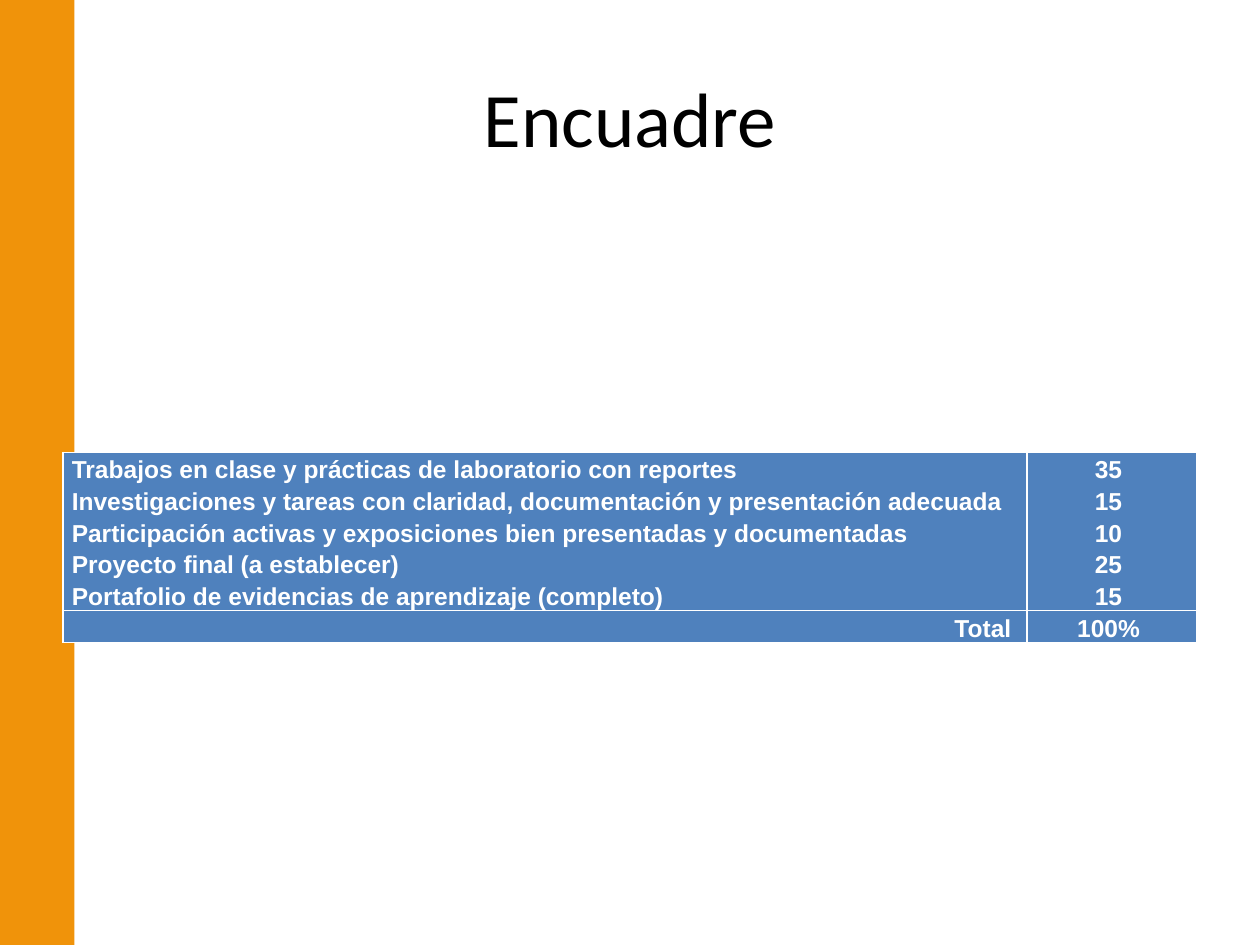
from pptx import Presentation
from pptx.dml.color import RGBColor
from pptx.enum.shapes import MSO_SHAPE as Shape
from pptx.enum.text import MSO_ANCHOR as Anchor, PP_ALIGN as Align
from pptx.util import Inches, Pt

ORANGE = RGBColor(0xF0, 0x93, 0x0A)
BLUE = RGBColor(0x4F, 0x81, 0xBD)
WHITE = RGBColor(0xFF, 0xFF, 0xFF)
BLACK = RGBColor(0, 0, 0)

WIDTH, HEIGHT = Inches(10), Inches(7.5)
MARGIN = Inches(0.5)
INNER = WIDTH - 2 * MARGIN

ITEMS = [
    ("Trabajos en clase y prácticas de laboratorio con reportes", "35 "),
    ("Investigaciones y tareas con claridad, documentación y presentación adecuada", "15 "),
    ("Participación activas y exposiciones bien presentadas y documentadas", "10 "),
    ("Proyecto final (a establecer)", "25 "),
    ("Portafolio de evidencias de aprendizaje (completo)", "15 "),
]
TOTAL = ("Total ", "100% ")


def add_band(slide, left, top, width, height):
    band = slide.shapes.add_shape(Shape.RECTANGLE, left, top, width, height)
    band.shadow.inherit = False
    band.fill.solid()
    band.fill.fore_color.rgb = ORANGE
    band.line.fill.background()


def set_title(slide, text, left, top, width, height):
    title = slide.shapes.title
    title.left, title.top, title.width, title.height = left, top, width, height
    frame = title.text_frame
    frame.text = text
    frame.vertical_anchor = Anchor.MIDDLE
    frame.margin_left = frame.margin_right = Inches(0.1)
    frame.margin_top = frame.margin_bottom = Inches(0.1)
    para = frame.paragraphs[0]
    para.alignment = Align.CENTER
    font = para.runs[0].font
    font.name, font.size, font.color.rgb = "Calibri", Pt(44), BLACK


def fill_cell(cell, lines, align):
    cell.fill.solid()
    cell.fill.fore_color.rgb = BLUE
    cell.margin_left = cell.margin_right = Inches(0.07)
    cell.margin_top = cell.margin_bottom = 0
    cell.text_frame.text = "\n".join(lines)
    for para in cell.text_frame.paragraphs:
        para.alignment = align
        para.line_spacing = 1.15
        font = para.runs[0].font
        font.name, font.size, font.bold = "Arial", Pt(14), True
        font.color.rgb = WHITE


def add_grades(slide, left, top, width, height):
    """Place the grading table: one row of listed items, then the total."""
    table = slide.shapes.add_table(2, 2, left, top, width, height).table
    table.first_row = table.horz_banding = False
    for col, share in zip(table.columns, (0.85, 0.15)):
        col.width = int(width * share)
    lines = len(ITEMS) + 1
    for row, count in zip(table.rows, (len(ITEMS), 1)):
        row.height = int(height * count / lines)

    names, marks = zip(*ITEMS)
    fill_cell(table.cell(0, 0), names, Align.LEFT)
    fill_cell(table.cell(0, 1), marks, Align.CENTER)
    fill_cell(table.cell(1, 0), TOTAL[:1], Align.RIGHT)
    fill_cell(table.cell(1, 1), TOTAL[1:], Align.CENTER)


def main():
    deck = Presentation()
    deck.slide_width, deck.slide_height = WIDTH, HEIGHT
    slide = deck.slides.add_slide(deck.slide_layouts[5])
    add_band(slide, 0, 0, Inches(0.59), HEIGHT)
    set_title(slide, "Encuadre", MARGIN, int(HEIGHT * 0.04), INNER, HEIGHT // 6)
    add_grades(slide, MARGIN, Inches(3.59), INNER, HEIGHT // 6)
    deck.save("out.pptx")


if __name__ == "__main__":
    main()
